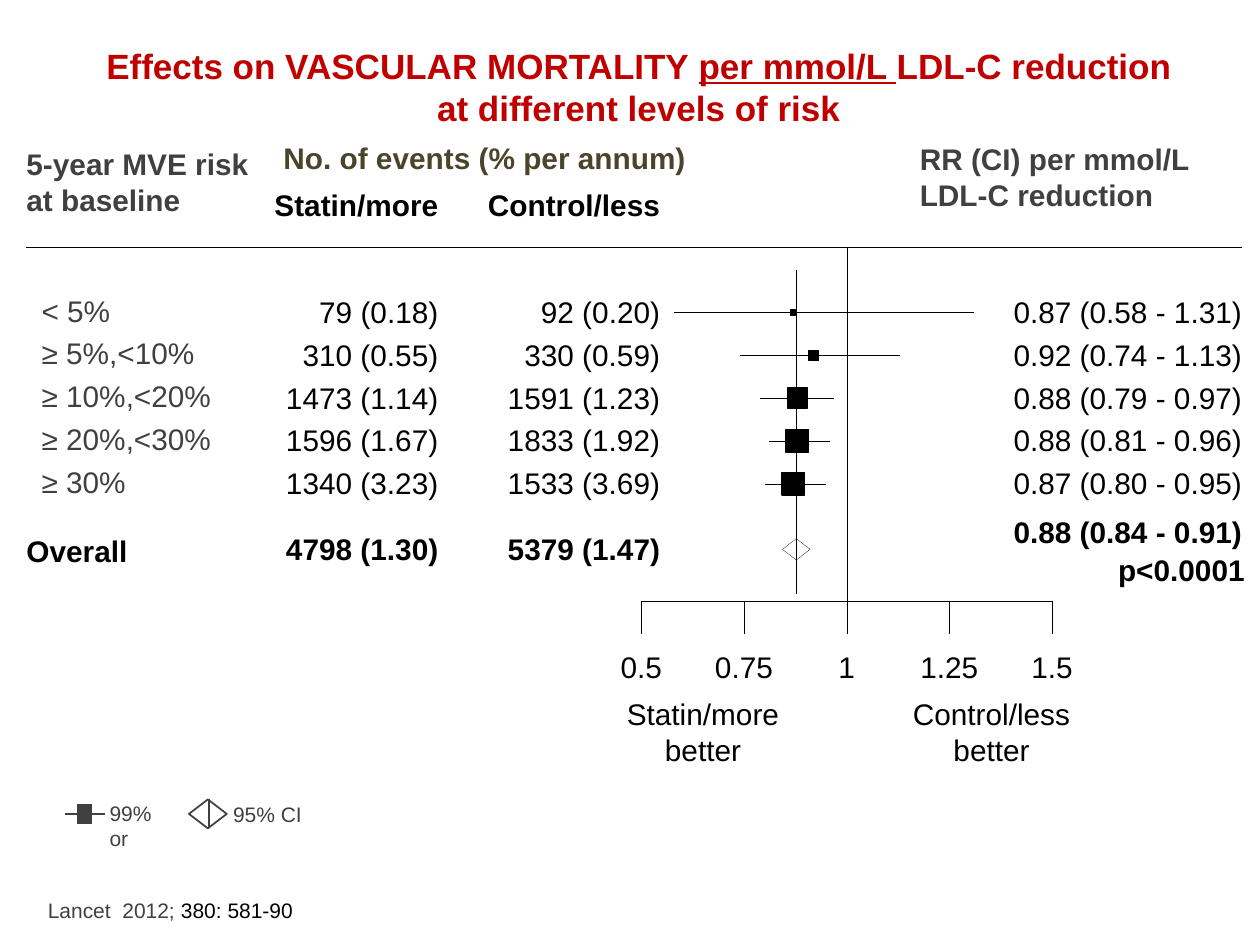
from dataclasses import dataclass

from lxml.etree import SubElement
from pptx import Presentation
from pptx.dml.color import RGBColor
from pptx.enum.dml import MSO_LINE_DASH_STYLE as DASH
from pptx.enum.shapes import MSO_CONNECTOR, MSO_SHAPE
from pptx.enum.text import PP_ALIGN as ALIGN
from pptx.oxml.ns import qn
from pptx.util import Inches, Pt


@dataclass(frozen=True)
class Theme:
    font: str = "Arial"
    title: str = "C00000"
    events: str = "4A452A"
    grey: str = "404040"
    black: str = "000000"
    title_size: int = 20
    body_size: int = 17
    small_size: int = 12
    hairline: float = 0.13
    legend_line: float = 1


THEME = Theme()
COLUMNS = {"statin": (2.1, 1.38), "control": (3.76, 1.48), "ratio": (7.86, 2)}
ROWS = [
    ("< 5%", "79 (0.18)", "92 (0.20)", 0.87, 0.58, 1.31, 0.04),
    ("≥ 5%,<10%", "310 (0.55)", "330 (0.59)", 0.92, 0.74, 1.13, 0.08),
    ("≥ 10%,<20%", "1473 (1.14)", "1591 (1.23)", 0.88, 0.79, 0.97, 0.16),
    ("≥ 20%,<30%", "1596 (1.67)", "1833 (1.92)", 0.88, 0.81, 0.96, 0.18),
    ("≥ 30%", "1340 (3.23)", "1533 (3.69)", 0.87, 0.80, 0.95, 0.18),
]
TICKS = [0.5, 0.75, 1, 1.25, 1.5]
FIRST_ROW, ROW_STEP = 2.48, 0.34
AXIS_LEFT, AXIS_SCALE, AXIS_TOP = 5.09, 3.26, 4.77


def axis_x(ratio):
    return AXIS_LEFT + (ratio - TICKS[0]) * AXIS_SCALE


def format_run(r, size, color, bold):
    r.font.name = THEME.font
    r.font.size = Pt(size)
    r.font.bold = bold
    r.font.color.rgb = RGBColor.from_string(color)


def add_text(s, text, x, y, w, h=0.29, size=THEME.body_size, color=THEME.black,
             bold=False, align=ALIGN.LEFT):
    tf = s.shapes.add_textbox(Inches(x), Inches(y), Inches(w), Inches(h)).text_frame
    tf.word_wrap = True
    tf.margin_left = tf.margin_right = tf.margin_top = tf.margin_bottom = 0
    tf.text = text
    for p in tf.paragraphs:
        p.alignment = align
        for r in p.runs:
            format_run(r, size, color, bold)
    return tf


def add_cell(s, column, text, y, bold=False):
    x, w = COLUMNS[column]
    add_text(s, text, x, y, w, bold=bold, align=ALIGN.RIGHT)


def add_line(s, x1, y1, x2, y2, color=THEME.black, width=THEME.hairline, dash=None):
    line = s.shapes.add_connector(
        MSO_CONNECTOR.STRAIGHT, Inches(x1), Inches(y1), Inches(x2), Inches(y2))
    line.line.color.rgb = RGBColor.from_string(color)
    line.line.width = Pt(width)
    if dash:
        line.line.dash_style = dash
    SubElement(line._element.spPr, qn("a:effectLst"))


def add_square(s, x, y, w, h, color=THEME.black):
    sp = s.shapes.add_shape(MSO_SHAPE.RECTANGLE, Inches(x - w / 2),
                            Inches(y - h / 2), Inches(w), Inches(h))
    sp.shadow.inherit = False
    sp.fill.solid()
    sp.fill.fore_color.rgb = RGBColor.from_string(color)
    sp.line.color.rgb = RGBColor.from_string(color)
    sp.line.width = Pt(0)


def add_diamond(s, x, y, w, h, color, width):
    sp = s.shapes.add_shape(MSO_SHAPE.DIAMOND, Inches(x - w / 2),
                            Inches(y - h / 2), Inches(w), Inches(h))
    sp.shadow.inherit = False
    sp.fill.background()
    sp.line.color.rgb = RGBColor.from_string(color)
    sp.line.width = Pt(width)


def add_title(s):
    tf = add_text(s, "Effects on VASCULAR MORTALITY \nat different levels of risk",
                  0.67, 0.35, 8.8, 1.15, THEME.title_size, THEME.title, True, ALIGN.CENTER)
    p = tf.paragraphs[0]
    for text, underline in (("per mmol/L ", True), ("LDL-C reduction", False)):
        r = p.add_run()
        r.text = text
        format_run(r, THEME.title_size, THEME.title, True)
        r.font.underline = underline


def add_headers(s):
    add_text(s, "5-year MVE risk\nat baseline", 0.21, 1.16, 1.9, 0.57,
             color=THEME.grey, bold=True)
    add_text(s, "No. of events (% per annum)", 2.25, 1.11, 3.4,
             color=THEME.events, bold=True)
    add_text(s, "RR (CI) per mmol/L\nLDL-C reduction", 7.3, 1.12, 2.4, 0.57,
             color=THEME.grey, bold=True)
    add_cell(s, "statin", "Statin/more", 1.48, True)
    add_cell(s, "control", "Control/less", 1.48, True)
    add_line(s, 0.21, 1.96, 9.86, 1.96)


def add_axis(s):
    add_line(s, axis_x(1), 1.96, axis_x(1), 4.87)
    add_line(s, axis_x(TICKS[0]), AXIS_TOP, axis_x(TICKS[-1]), AXIS_TOP)
    for tick in TICKS:
        x = axis_x(tick)
        add_line(s, x, AXIS_TOP, x, 5.03)
        add_text(s, str(tick), x - 0.3, 5.15, 0.6, align=ALIGN.CENTER)
    for text, x in (("Statin/more\nbetter", 5.58), ("Control/less\nbetter", 7.87)):
        add_text(s, text, x - 0.7, 5.52, 1.4, 0.59, align=ALIGN.CENTER)


def add_risk_row(s, y, label, statin, control, ratio, low, high, size):
    top = y - 0.15
    add_text(s, label, 0.33, top - 0.01, 1.5, color=THEME.grey)
    add_cell(s, "statin", statin, top)
    add_cell(s, "control", control, top)
    add_cell(s, "ratio", f"{ratio:.2f} ({low:.2f} - {high:.2f})", top)
    add_square(s, axis_x(ratio), y, size, size)
    add_line(s, axis_x(low), y, axis_x(high), y)


def add_overall(s):
    add_text(s, "Overall", 0.21, 4.23, 1, bold=True)
    add_cell(s, "statin", "4798 (1.30)", 4.21, True)
    add_cell(s, "control", "5379 (1.47)", 4.21, True)
    add_cell(s, "ratio", "0.88 (0.84 - 0.91)", 4.08, True)
    add_text(s, "p<0.0001", 8.68, 4.38, 1.2, bold=True, align=ALIGN.RIGHT)
    add_diamond(s, 6.32, 4.36, 0.22, 0.17, THEME.black, THEME.hairline)
    add_line(s, 6.32, 2.14, 6.32, 4.71, dash=DASH.SQUARE_DOT)


def add_legend(s):
    look = {"size": THEME.small_size, "color": THEME.grey}
    add_square(s, 0.67, 6.46, 0.11, 0.15, THEME.grey)
    add_line(s, 0.52, 6.46, 0.83, 6.46, THEME.grey, THEME.legend_line)
    add_text(s, "99% or", 0.87, 6.35, 0.5, 0.4, **look)
    add_diamond(s, 1.65, 6.46, 0.3, 0.23, THEME.grey, THEME.legend_line)
    add_line(s, 1.66, 6.57, 1.66, 6.34, THEME.grey, THEME.legend_line)
    add_text(s, "95% CI", 1.85, 6.36, 0.7, 0.2, **look)


def add_citation(s):
    tf = add_text(s, "Lancet  2012; ", 0.38, 7.12, 2.3, 0.2,
                  THEME.small_size, THEME.grey)
    r = tf.paragraphs[0].add_run()
    r.text = "380: 581-90"
    format_run(r, THEME.small_size, THEME.black, False)


def main():
    prs = Presentation()
    prs.slide_width, prs.slide_height = Inches(10), Inches(7.5)
    s = prs.slides.add_slide(prs.slide_layouts[6])
    add_citation(s)
    add_legend(s)
    add_title(s)
    add_headers(s)
    add_axis(s)
    for i, row in enumerate(ROWS):
        add_risk_row(s, FIRST_ROW + i * ROW_STEP, *row)
    add_overall(s)
    prs.save("out.pptx")


if __name__ == "__main__":
    main()
